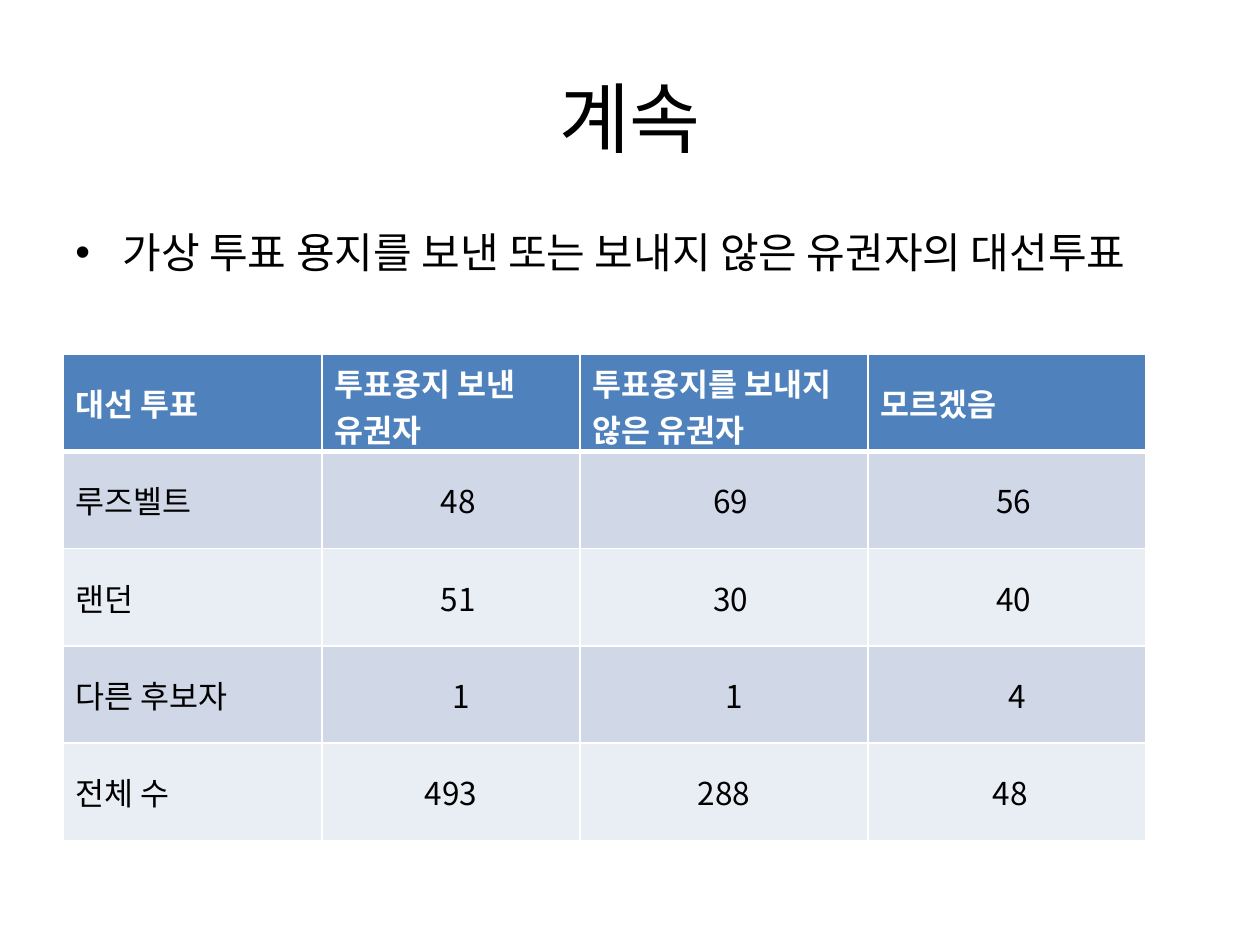
from lxml import etree
from pptx import Presentation
from pptx.dml.color import RGBColor
from pptx.enum.text import MSO_ANCHOR, PP_ALIGN
from pptx.oxml.ns import qn
from pptx.util import Pt

FONT = "Noto Sans CJK KR"
BLACK = RGBColor(0x00, 0x00, 0x00)
WHITE = RGBColor(0xFF, 0xFF, 0xFF)
HEADER_BLUE = RGBColor(0x4F, 0x81, 0xBD)
BAND_DARK = RGBColor(0xD0, 0xD8, 0xE8)
BAND_LIGHT = RGBColor(0xE9, 0xED, 0xF4)
MIDDLE = MSO_ANCHOR.MIDDLE
CENTER = PP_ALIGN.CENTER


def style_run(r, size, color=BLACK, bold=False):
    r.font.size = Pt(size)
    r.font.bold = bold
    r.font.color.rgb = color
    r.font.name = FONT
    etree.SubElement(r.font._element, qn("a:ea"), typeface=FONT)


def add_border(cell, side, width):
    """Draw a white line on one side (L, R, T or B); call before filling the cell."""
    ln = etree.SubElement(cell._tc.get_or_add_tcPr(), qn(f"a:ln{side}"), w=str(Pt(width)))
    fill = etree.SubElement(ln, qn("a:solidFill"))
    etree.SubElement(fill, qn("a:srgbClr"), val=str(WHITE))


prs = Presentation()
prs.slide_width, prs.slide_height = Pt(720), Pt(540)
s = prs.slides.add_slide(prs.slide_layouts[6])

# Title
tf = s.shapes.add_textbox(Pt(36), Pt(21.6), Pt(648), Pt(90)).text_frame
tf.word_wrap = True
tf.vertical_anchor = MIDDLE
p = tf.paragraphs[0]
p.text = "계속"
p.alignment = CENTER
style_run(p.runs[0], 44)

# Bullet
tf = s.shapes.add_textbox(Pt(36), Pt(126), Pt(648), Pt(356.4)).text_frame
tf.word_wrap = True
p = tf.paragraphs[0]
p.text = "가상 투표 용지를 보낸 또는 보내지 않은 유권자의 대선투표"
p.space_before = Pt(4.8)
style_run(p.runs[0], 24)
pPr = p._p.get_or_add_pPr()
pPr.set("marL", str(Pt(27)))
pPr.set("indent", str(-Pt(27)))
etree.SubElement(pPr, qn("a:buFont"), typeface="Arial")
etree.SubElement(pPr, qn("a:buChar"), char="•")

# Vote table
ROWS = [
    ["대선 투표", "투표용지 보낸 유권자", "투표용지를 보내지 않은 유권자", "모르겠음"],
    ["루즈벨트", "48", "69", "56"],
    ["랜던", "51", "30", "40"],
    ["다른 후보자", "1", "1", "4"],
    ["전체 수", "493", "288", "48"],
]
COL_WIDTHS = [148, 147.5, 164.5, 158.5]
ROW_HEIGHT = 55.6
SIDE_MARGIN = 7.2
# Extra left margin that shifts the centred numbers
ROW_SHIFTS = [0, 8, 8, 12, 0]
LAST_TOTAL_SHIFT = 4

table = s.shapes.add_table(
    len(ROWS), len(COL_WIDTHS), Pt(36), Pt(202.3),
    Pt(sum(COL_WIDTHS)), Pt(ROW_HEIGHT * len(ROWS))).table
for column, width in zip(table.columns, COL_WIDTHS):
    column.width = Pt(width)

for i, values in enumerate(ROWS):
    table.rows[i].height = Pt(ROW_HEIGHT)
    header = i == 0
    band = HEADER_BLUE if header else BAND_DARK if i % 2 else BAND_LIGHT
    for j, value in enumerate(values):
        cell = table.cell(i, j)
        cell.text = value
        cell.vertical_anchor = MIDDLE
        p = cell.text_frame.paragraphs[0]
        style_run(p.runs[0], 18, WHITE if header else BLACK, header)
        if not header and j > 0:
            p.alignment = CENTER
            last = i == len(ROWS) - 1 and j == len(values) - 1
            shift = LAST_TOTAL_SHIFT if last else ROW_SHIFTS[i]
            cell.margin_left = Pt(SIDE_MARGIN + shift)
        add_border(cell, "L", 1)
        add_border(cell, "R", 1)
        add_border(cell, "T", 3 if i == 1 else 1)
        add_border(cell, "B", 3 if header else 1)
        cell.fill.solid()
        cell.fill.fore_color.rgb = band

prs.save("out.pptx")
